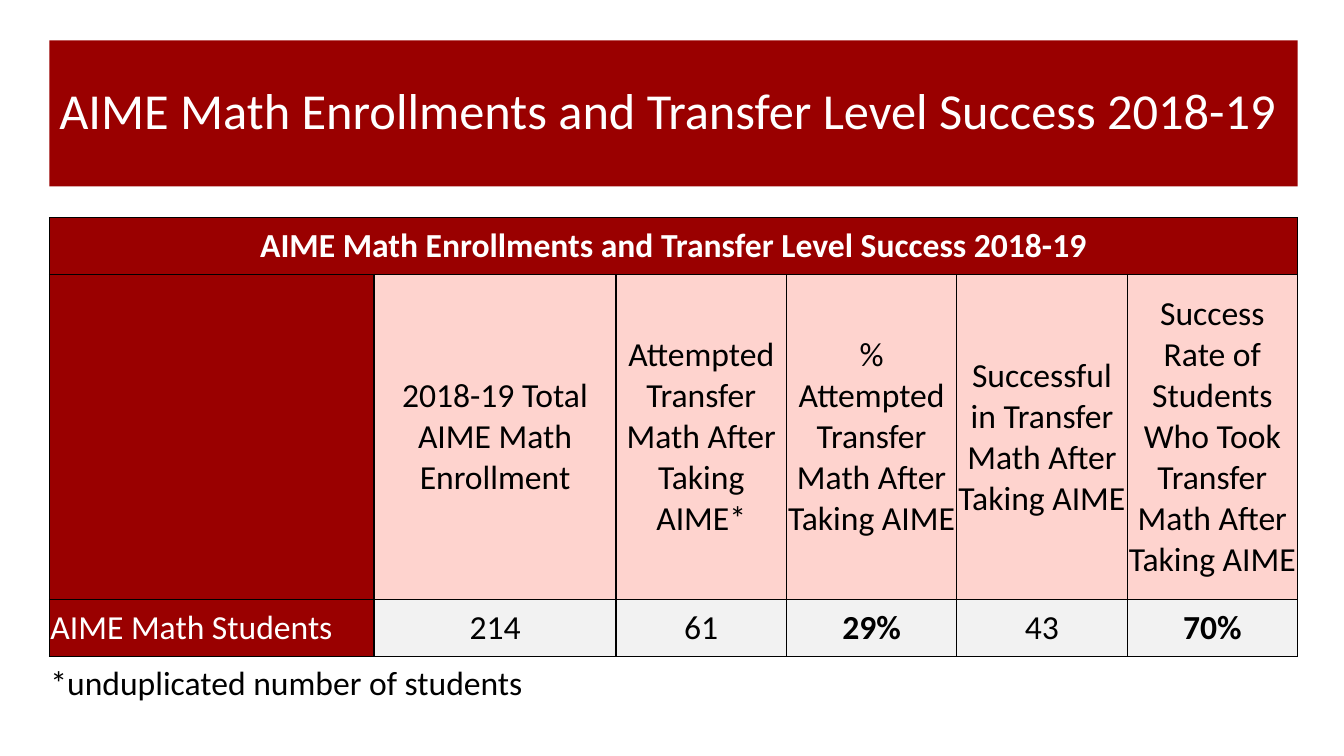
import pptx
import pptx.dml.color
import pptx.enum.shapes
import pptx.enum.text
import pptx.oxml.ns
import pptx.util
from lxml import etree

Inches = pptx.util.Inches
Pt = pptx.util.Pt
RGBColor = pptx.dml.color.RGBColor
ALIGN = pptx.enum.text.PP_ALIGN
ANCHOR = pptx.enum.text.MSO_ANCHOR

DARK_RED = RGBColor(0x9A, 0x00, 0x00)
PINK = RGBColor(0xFE, 0xD3, 0xCE)
PALE_GRAY = RGBColor(0xF2, 0xF2, 0xF2)
BLACK = RGBColor(0x00, 0x00, 0x00)
WHITE = RGBColor(0xFF, 0xFF, 0xFF)

FONT = "Calibri"
TITLE = "AIME Math Enrollments and Transfer Level Success 2018-19"
HEADINGS = [
    "2018-19 Total AIME Math Enrollment",
    "Attempted Transfer Math After Taking AIME*",
    "% Attempted Transfer Math After Taking AIME",
    "Successful in Transfer Math After Taking AIME",
    "Success Rate of Students Who Took Transfer Math After Taking AIME",
]
STUDENTS = ["214", "61", "29%", "43", "70%"]
FOOTNOTE = "*unduplicated number of students"

LEFT, WIDTH = 0.49, 12.38
COLUMN_WIDTHS = [3.22] + [2.4] + [1.69] * 4
ROW_HEIGHTS = [0.56, 3.23, 0.56, 0.54]
NOTE_ROW = len(ROW_HEIGHTS) - 1


def write_text(frame, text, size, color, align, bold=False):
    para = frame.paragraphs[0]
    para.alignment = align
    span = para.add_run()
    span.text = text
    span.font.name = FONT
    span.font.size = Pt(size)
    span.font.bold = bold
    span.font.color.rgb = color
    return para


def add_title(page):
    box = page.shapes.add_shape(
        pptx.enum.shapes.MSO_SHAPE.RECTANGLE,
        Inches(LEFT), Inches(0.4), Inches(WIDTH), Inches(1.45))
    box.shadow.inherit = False
    box.fill.solid()
    box.fill.fore_color.rgb = DARK_RED
    box.line.fill.background()
    frame = box.text_frame
    frame.word_wrap = True
    frame.vertical_anchor = ANCHOR.MIDDLE
    para = write_text(frame, TITLE, 36, WHITE, ALIGN.LEFT)
    para.line_spacing = 0.9


def set_borders(cell, black_sides):
    """Draw the given sides (of L, R, T, B) in black and clear the others."""
    properties = cell._tc.get_or_add_tcPr()
    qn = pptx.oxml.ns.qn
    for side in "LRTB":
        line = etree.SubElement(properties, qn(f"a:ln{side}"), w=str(Pt(1)))
        if side in black_sides:
            fill = etree.SubElement(line, qn("a:solidFill"))
            etree.SubElement(fill, qn("a:srgbClr"), val=str(BLACK))
        else:
            etree.SubElement(line, qn("a:noFill"))


def fill_cell(cell, fill, text="", color=BLACK, align=ALIGN.CENTER, bold=False):
    if fill is None:
        cell.fill.background()
    else:
        cell.fill.solid()
        cell.fill.fore_color.rgb = fill
    cell.vertical_anchor = ANCHOR.MIDDLE
    cell.margin_left = cell.margin_right = cell.margin_top = Inches(0.01)
    cell.margin_bottom = 0
    if text:
        write_text(cell.text_frame, text, 24, color, align, bold)


def add_success_table(page):
    table = page.shapes.add_table(
        len(ROW_HEIGHTS), len(COLUMN_WIDTHS),
        Inches(LEFT), Inches(2.16), Inches(WIDTH), Inches(sum(ROW_HEIGHTS))).table
    for column, width in zip(table.columns, COLUMN_WIDTHS):
        column.width = Inches(width)
    for index, (row, height) in enumerate(zip(table.rows, ROW_HEIGHTS)):
        row.height = Inches(height)
        for cell in row.cells:
            set_borders(cell, "T" if index == NOTE_ROW else "LRTB")

    table.cell(0, 0).merge(table.cell(0, len(COLUMN_WIDTHS) - 1))
    table.cell(NOTE_ROW, 0).merge(table.cell(NOTE_ROW, 1))

    fill_cell(table.cell(0, 0), DARK_RED, TITLE, WHITE, bold=True)
    fill_cell(table.cell(1, 0), DARK_RED)
    fill_cell(table.cell(2, 0), DARK_RED, "AIME Math Students", WHITE, ALIGN.LEFT)
    for column, (heading, value) in enumerate(zip(HEADINGS, STUDENTS), start=1):
        fill_cell(table.cell(1, column), PINK, heading)
        fill_cell(table.cell(2, column), PALE_GRAY, value, bold=value.endswith("%"))
    fill_cell(table.cell(NOTE_ROW, 0), None, FOOTNOTE, align=ALIGN.LEFT)
    for column in range(2, len(COLUMN_WIDTHS)):
        fill_cell(table.cell(NOTE_ROW, column), None)


def main():
    deck = pptx.Presentation()
    deck.slide_width = Inches(13.33)
    deck.slide_height = Inches(7.5)
    page = deck.slides.add_slide(deck.slide_layouts[6])
    add_title(page)
    add_success_table(page)
    deck.save("out.pptx")


if __name__ == "__main__":
    main()
